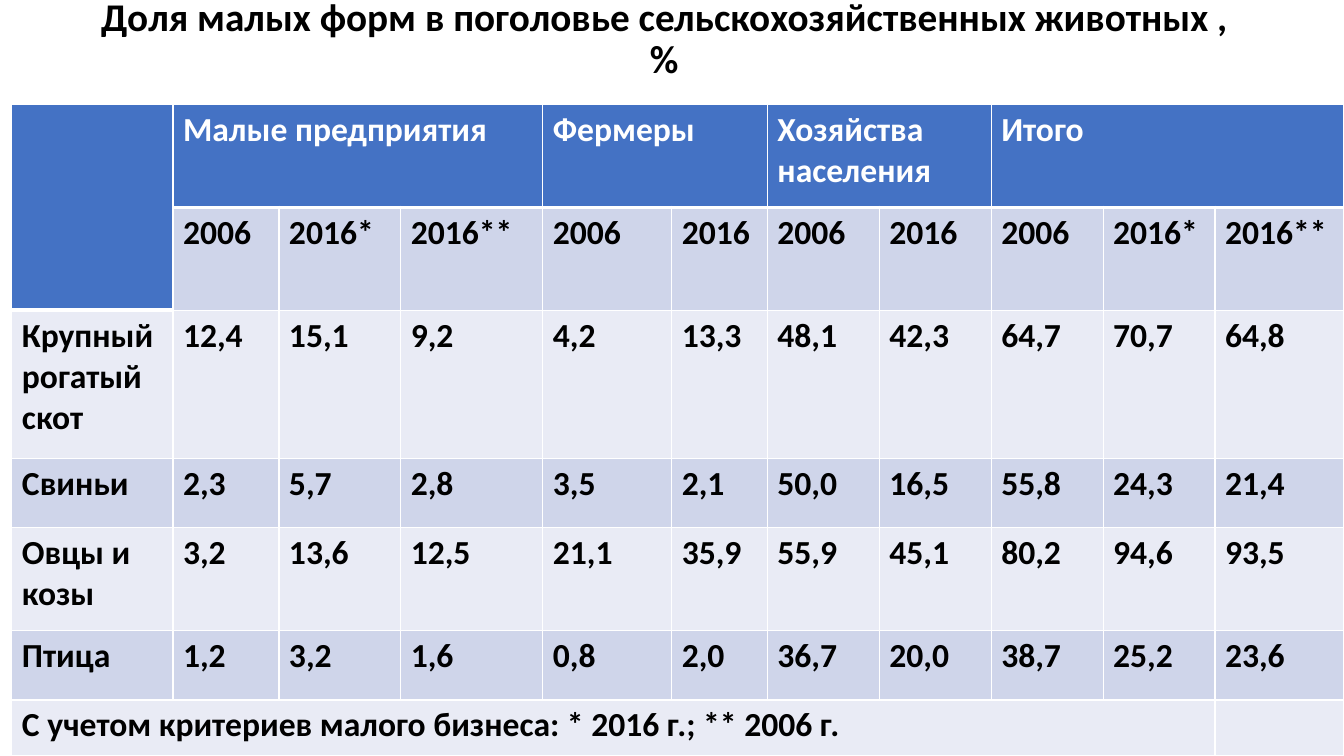
import pptx
import pptx.dml.color
import pptx.enum.text
import pptx.oxml
import pptx.oxml.ns
import pptx.util
from pptx.util import Cm

COLORS = {
    "header": "4472C4",
    "dark band": "CFD5EA",
    "light band": "E9EBF5",
    "border": "FFFFFF",
    "header text": "FFFFFF",
    "text": "000000",
}
FONT = "Calibri"
TITLE = "Доля малых форм в поголовье сельскохозяйственных животных , %"
FOOTNOTE = "С учетом критериев малого бизнеса: * 2016 г.; ** 2006 г."

# Header groups: name and the years below it
GROUPS = [
    ("Малые предприятия", ["2006", "2016*", "2016**"]),
    ("Фермеры", ["2006", "2016"]),
    ("Хозяйства населения", ["2006", "2016"]),
    ("Итого", ["2006", "2016*", "2016**"]),
]
LIVESTOCK = [
    "Крупный рогатый скот|12,4|15,1|9,2|4,2|13,3|48,1|42,3|64,7|70,7|64,8",
    "Свиньи|2,3|5,7|2,8|3,5|2,1|50,0|16,5|55,8|24,3|21,4",
    "Овцы и козы|3,2|13,6|12,5|21,1|35,9|55,9|45,1|80,2|94,6|93,5",
    "Птица|1,2|3,2|1,6|0,8|2,0|36,7|20,0|38,7|25,2|23,6",
]
COLUMN_WIDTHS = [4.06, 2.67, 3.07, 3.58, 3.25, 2.41] + [2.82] * 4 + [3.25]
ROW_HEIGHTS = [2.59, 2.59, 3.73, 1.75, 2.59, 1.75, 1.4]


def rgb(name):
    return pptx.dml.color.RGBColor.from_string(COLORS[name])


def set_font(paragraph, size, color):
    paragraph.font.name = FONT
    paragraph.font.size = pptx.util.Pt(size)
    paragraph.font.bold = True
    paragraph.font.color.rgb = rgb(color)


def set_borders(cell, top, bottom):
    """Draw the four cell borders; widths in points."""
    properties = cell._tc.get_or_add_tcPr()
    widths = {"lnL": 1, "lnR": 1, "lnT": top, "lnB": bottom}
    for position, (tag, width) in enumerate(widths.items()):
        line = pptx.oxml.parse_xml(
            f'<a:{tag} {pptx.oxml.ns.nsdecls("a")} w="{pptx.util.Pt(width)}">'
            f'<a:solidFill><a:srgbClr val="{COLORS["border"]}"/></a:solidFill>'
            f'</a:{tag}>')
        properties.insert(position, line)


def add_title(slide, left, top, width, height):
    box = slide.shapes.add_textbox(left, top, width, height)
    frame = box.text_frame
    frame.word_wrap = True
    frame.vertical_anchor = pptx.enum.text.MSO_ANCHOR.MIDDLE
    paragraph = frame.paragraphs[0]
    paragraph.text = TITLE
    paragraph.alignment = pptx.enum.text.PP_ALIGN.CENTER
    paragraph.line_spacing = 0.9
    set_font(paragraph, 28, "text")


def table_rows():
    """Return the text of every row; merged-away cells stay empty."""
    groups, years = [""], [""]
    for name, group_years in GROUPS:
        groups += [name] + [""] * (len(group_years) - 1)
        years += group_years
    footnote = [FOOTNOTE] + [""] * (len(years) - 1)
    return [groups, years] + [line.split("|") for line in LIVESTOCK] + [footnote]


def add_livestock_table(slide, left, top, width, height):
    rows = table_rows()
    table = slide.shapes.add_table(
        len(rows), len(COLUMN_WIDTHS), left, top, width, height).table
    for column, column_width in zip(table.columns, COLUMN_WIDTHS):
        column.width = Cm(column_width)
    for row, row_height in zip(table.rows, ROW_HEIGHTS):
        row.height = Cm(row_height)

    # Cells
    for r, texts in enumerate(rows):
        for c, text in enumerate(texts):
            cell = table.cell(r, c)
            is_header = r == 0 or (r == 1 and c == 0)
            band = "dark band" if r % 2 else "light band"
            cell.fill.solid()
            cell.fill.fore_color.rgb = rgb("header" if is_header else band)
            cell.text = text
            set_font(cell.text_frame.paragraphs[0], 24,
                     "header text" if is_header else "text")
            below_header = (r == 2 and c == 0) or (r == 1 and c > 0)
            set_borders(cell, 3 if below_header else 1, 3 if is_header else 1)

    # Merged cells
    table.cell(0, 0).merge(table.cell(1, 0))
    first = 1
    for _, group_years in GROUPS:
        last = first + len(group_years) - 1
        table.cell(0, first).merge(table.cell(0, last))
        first = last + 1
    table.cell(len(rows) - 1, 0).merge(
        table.cell(len(rows) - 1, len(COLUMN_WIDTHS) - 2))


def main():
    presentation = pptx.Presentation()
    presentation.slide_width = Cm(33.87)
    presentation.slide_height = Cm(19.05)
    slide = presentation.slides.add_slide(presentation.slide_layouts[6])
    add_title(slide, Cm(2.13), Cm(-0.84), Cm(29.21), Cm(3.68))
    add_livestock_table(slide, Cm(0.3), Cm(2.64),
                        Cm(sum(COLUMN_WIDTHS)), Cm(sum(ROW_HEIGHTS)))
    presentation.save("out.pptx")


if __name__ == "__main__":
    main()
